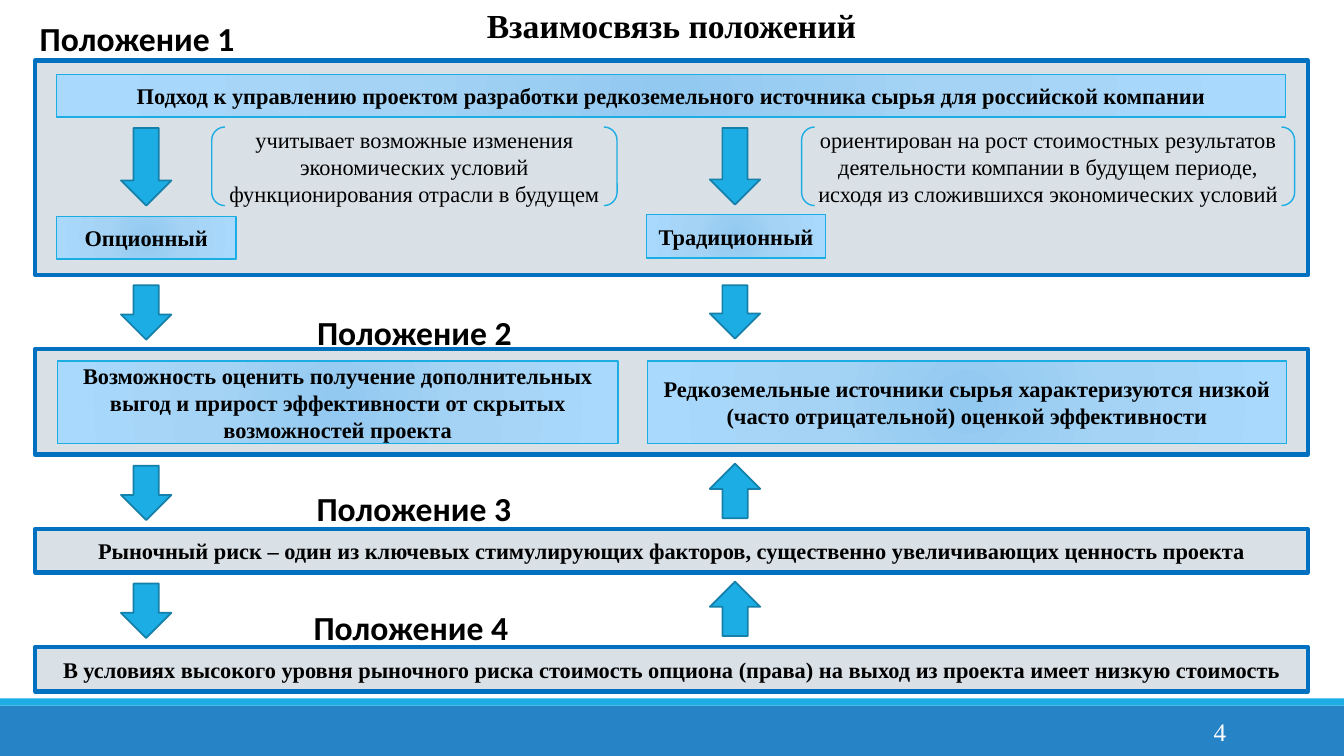
from pptx import Presentation
from pptx.dml.color import RGBColor
from pptx.enum.shapes import MSO_SHAPE
from pptx.enum.text import MSO_ANCHOR, PP_ALIGN
from pptx.oxml import parse_xml
from pptx.oxml.ns import nsdecls, qn
from pptx.util import Emu, Pt

# Content: boxes are (left, top, width, height) in px, 100 px to the inch
PX = 9144
SERIF, SANS = "Times New Roman", "Calibri"
BLACK, WHITE, CYAN, TEAL = "000000", "FFFFFF", "1CADE4", "1580A9"
BLUE, GREY, FOOTER = "0070C0", "D9E0E6", "2683C6"
GLOW = [(0, "92C9F0"), (45, "A4D3F5"), (100, "A9D9FD")]
FRAME_LEFT, FRAME_WIDTH = 35, 1262
ARROW_LEFT, ARROW_RIGHT, ARROW_WIDTH = 120, 704, 50

TITLE = "Взаимосвязь положений"
BANDS = [((0, 700, 1333, 50), FOOTER), ((0, 693, 1333, 7), CYAN)]
PAGE = ("4", (1083, 706, 143, 40))

FRAMES = [  # top, height, text
    (60, 213, ""),
    (346, 105, ""),
    (525, 43, "Рыночный риск – один из ключевых стимулирующих факторов, "
              "существенно увеличивающих ценность проекта"),
    (642, 44, "В условиях высокого уровня рыночного риска стоимость опциона "
              "(права) на выход из проекта имеет низкую стоимость"),
]
PANELS = [
    ((56, 74, 1219, 42), "Подход к управлению проектом разработки редкоземельного "
                         "источника сырья для российской компании"),
    ((56, 215, 178, 42), "Опционный"),
    ((641, 213, 178, 43), "Традиционный"),
    ((642, 358, 634, 82), "Редкоземельные источники сырья характеризуются низкой "
                          "(часто отрицательной) оценкой эффективности"),
    ((57, 358, 556, 82), "Возможность оценить получение дополнительных выгод и "
                         "прирост эффективности от скрытых возможностей проекта"),
]
BRACKETS = [
    ((210, 126, 402, 78), "учитывает возможные изменения экономических условий "
                          "функционирования отрасли в будущем"),
    ((795, 126, 489, 78), "ориентирован на рост стоимостных результатов "
                          "деятельности компании в будущем периоде, исходя из "
                          "сложившихся экономических условий"),
]
ARROWS = [  # left, top, height, rotation
    (ARROW_LEFT, 127, 77, 0), (ARROW_RIGHT, 127, 76, 0),
    (ARROW_LEFT, 283, 54, 0), (ARROW_RIGHT, 283, 53, 0),
    (ARROW_LEFT, 462, 54, 0), (ARROW_RIGHT, 460, 54, 180),
    (ARROW_LEFT, 579, 54, 0), (ARROW_RIGHT, 577, 54, 180),
]
LABELS = [  # text, left, top, width
    ("Положение 1", 29, 13, 214),
    ("Положение 2", 304, 305, 214),
    ("Положение 3", 300, 479, 221),
    ("Положение 4", 297, 597, 221),
]


def rgb(color):
    return RGBColor.from_string(color)


def emu(box):
    return [Emu(v * PX) for v in box]


def write(sp, text, size=16, font=SERIF, color=BLACK, bold=True,
          align=PP_ALIGN.CENTER, anchor=MSO_ANCHOR.MIDDLE, wrap=True):
    tf = sp.text_frame
    tf.text = text
    tf.word_wrap = wrap
    tf.vertical_anchor = anchor
    p = tf.paragraphs[0]
    p.alignment = align
    r = p.runs[0]
    r.font.size, r.font.name, r.font.bold = Pt(size), font, bold
    r.font.color.rgb = rgb(color)
    return r


def add_shape(kind, box, fill=None, line=None, width=1):
    sp = s.shapes.add_shape(kind, *emu(box))
    sp.shadow.inherit = False
    if fill:
        sp.fill.solid()
        sp.fill.fore_color.rgb = rgb(fill)
    else:
        sp.fill.background()
    if line:
        sp.line.color.rgb = rgb(line)
        sp.line.width = Pt(width)
    else:
        sp.line.fill.background()
    return sp


def add_glow(sp):
    stops = "".join(f'<a:gs pos="{pos * 1000}"><a:srgbClr val="{color}"/></a:gs>'
                    for pos, color in GLOW)
    grad = parse_xml(
        f'<a:gradFill {nsdecls("a")} rotWithShape="1"><a:gsLst>{stops}</a:gsLst>'
        '<a:path path="circle"><a:fillToRect l="100000" t="100000" '
        'r="100000" b="100000"/></a:path></a:gradFill>')
    sp_pr = sp._element.spPr
    sp_pr.replace(sp_pr.find(qn("a:noFill")), grad)


def add_outline(r):
    r._r.get_or_add_rPr().insert(0, parse_xml(
        f'<a:ln {nsdecls("a")} w="{Pt(0.75)}"><a:solidFill>'
        f'<a:srgbClr val="{WHITE}"/></a:solidFill></a:ln>'))


prs = Presentation()
prs.slide_width, prs.slide_height = emu((1333, 750))
s = prs.slides.add_slide(prs.slide_layouts[5])

# Footer bands and page number
for box, color in BANDS:
    add_shape(MSO_SHAPE.RECTANGLE, box, color)
page_text, page_box = PAGE
write(s.shapes.add_textbox(*emu(page_box)), page_text, 18, color=WHITE,
      bold=False, align=PP_ALIGN.RIGHT)

# Title
title = s.shapes.title
title.left, title.top, title.width, title.height = emu((FRAME_LEFT, 0, FRAME_WIDTH, 50))
write(title, TITLE, 24, anchor=MSO_ANCHOR.TOP)

# Frames, panels and brackets
for top, height, text in FRAMES:
    sp = add_shape(MSO_SHAPE.RECTANGLE, (FRAME_LEFT, top, FRAME_WIDTH, height),
                   GREY, BLUE, 3)
    if text:
        write(sp, text)
for box, text in PANELS:
    sp = add_shape(MSO_SHAPE.RECTANGLE, box, line=CYAN)
    add_glow(sp)
    write(sp, text)
for box, text in BRACKETS:
    write(add_shape(MSO_SHAPE.DOUBLE_BRACKET, box, line=CYAN), text, bold=False)

# Block arrows
for left, top, height, rotation in ARROWS:
    sp = add_shape(MSO_SHAPE.DOWN_ARROW, (left, top, ARROW_WIDTH, height),
                   CYAN, TEAL, 1.25)
    sp.rotation = rotation

# Section labels
for text, left, top, width in LABELS:
    sp = s.shapes.add_textbox(*emu((left, top, width, 50)))
    add_outline(write(sp, text, 24, SANS, anchor=MSO_ANCHOR.TOP, wrap=False))

prs.save("out.pptx")
